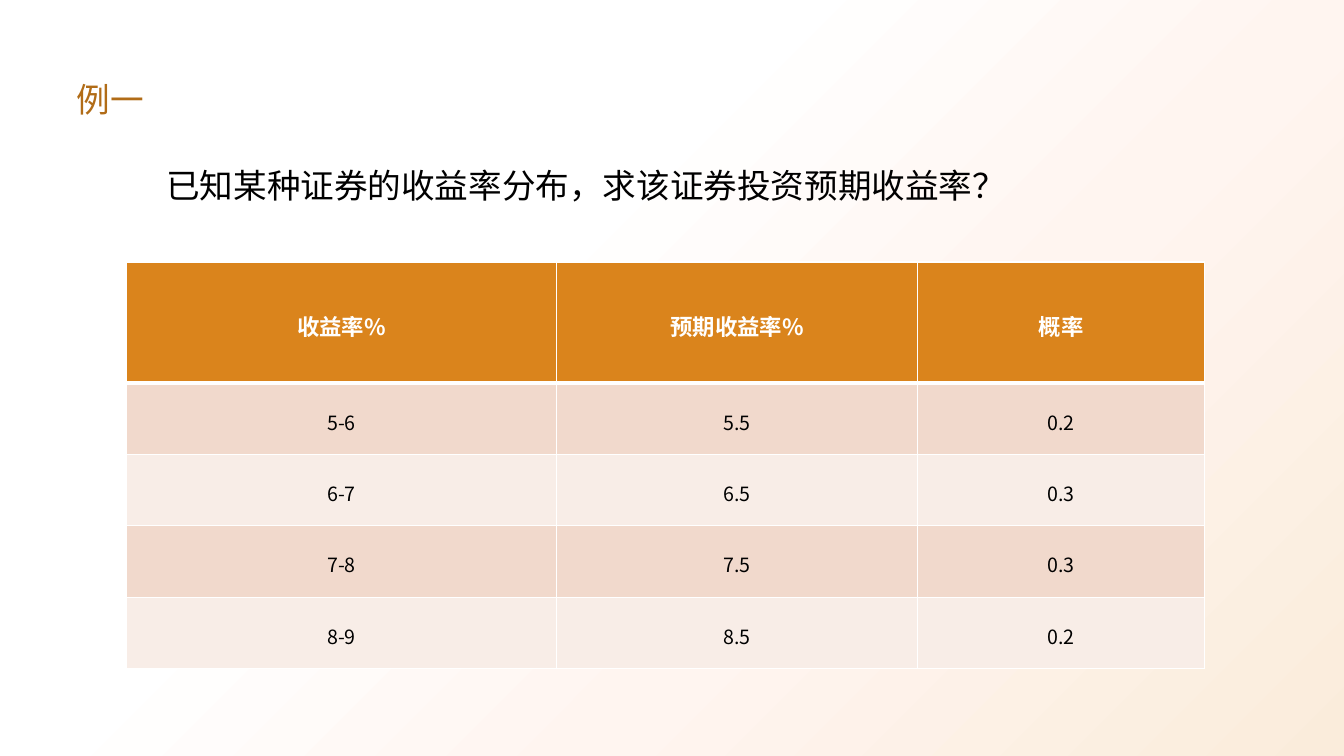
from copy import deepcopy

from lxml import etree
from pptx import Presentation, util as u
from pptx.dml.color import RGBColor
from pptx.enum import shapes, text
from pptx.oxml.ns import qn

FONT = "Noto Sans CJK SC"


def color(hex_code):
    return RGBColor.from_string(hex_code)


def write(frame, words, size=24, ink="000000", bold=False, align=text.PP_ALIGN.LEFT,
          anchor=text.MSO_ANCHOR.TOP, spacing=1.0, margins=(0, 0)):
    """Fill a text frame; margins are horizontal and vertical, in cm."""
    frame.word_wrap = True
    frame.vertical_anchor = anchor
    frame.margin_left = frame.margin_right = u.Cm(margins[0])
    frame.margin_top = frame.margin_bottom = u.Cm(margins[1])
    paragraph = frame.paragraphs[0]
    paragraph.alignment = align
    paragraph.line_spacing = spacing
    run = paragraph.add_run()
    run.text = words
    run.font.size = u.Pt(size)
    run.font.bold = bold
    run.font.color.rgb = color(ink)
    run.font.name = FONT
    etree.SubElement(run.font._element, qn("a:ea"), typeface=FONT)


deck = Presentation()
deck.slide_width, deck.slide_height = u.Cm(33.87), u.Cm(19.05)
slide = deck.slides.add_slide(deck.slide_layouts[6])

# Backdrop fading from white to cream
backdrop = slide.shapes.add_shape(shapes.MSO_SHAPE.RECTANGLE, 0, 0,
                                  deck.slide_width, deck.slide_height)
backdrop.shadow.inherit = False
backdrop.line.fill.background()
backdrop.fill.gradient()
backdrop.fill.gradient_angle = 315
first_stop = backdrop.fill._fill._gradFill.find(qn("a:gsLst"))[0]
first_stop.addnext(deepcopy(first_stop))
fade = [(0.37, "FFFFFF"), (0.64, "FFF5F0"), (1, "FAECDB")]
for stop, (position, shade) in zip(backdrop.fill.gradient_stops, fade):
    stop.position = position
    stop.color.rgb = color(shade)

# Question
question = slide.shapes.add_textbox(u.Cm(4.19), u.Cm(3.86), u.Cm(21.69), u.Cm(1.6))
write(question.text_frame, "已知某种证券的收益率分布，求该证券投资预期收益率？", spacing=1.3)

# Table of returns
returns = [
    ("收益率%", "预期收益率%", "概率"),
    ("5-6", "5.5", "0.2"),
    ("6-7", "6.5", "0.3"),
    ("7-8", "7.5", "0.3"),
    ("8-9", "8.5", "0.2"),
]
column_widths = [10.85, 9.09, 7.24]
row_heights = [3.05] + [1.8] * 4
table = slide.shapes.add_table(
    len(returns), len(column_widths), u.Cm(3.18), u.Cm(6.6),
    u.Cm(sum(column_widths)), u.Cm(sum(row_heights))).table
for column, width in zip(table.columns, column_widths):
    column.width = u.Cm(width)
for row, height in zip(table.rows, row_heights):
    row.height = u.Cm(height)

for r, values in enumerate(returns):
    header = r == 0
    band = "DA841C" if header else ("F8EDE7", "F1D9CC")[r % 2]
    borders = {"lnL": 1, "lnR": 1, "lnT": 3 if r == 1 else 1, "lnB": 3 if header else 1}
    for c, value in enumerate(values):
        cell = table.cell(r, c)
        write(cell.text_frame, value, size=16 if header else 14,
              ink="FFFFFF" if header else "000000", bold=header,
              align=text.PP_ALIGN.CENTER, spacing=1.2)
        cell.vertical_anchor = text.MSO_ANCHOR.MIDDLE
        cell.margin_left = cell.margin_right = u.Cm(0.48)
        cell.margin_top = cell.margin_bottom = u.Cm(0.3)
        properties = cell._tc.get_or_add_tcPr()
        for side, points in borders.items():
            border = etree.SubElement(properties, qn(f"a:{side}"), w=str(u.Pt(points)))
            border_fill = etree.SubElement(border, qn("a:solidFill"))
            etree.SubElement(border_fill, qn("a:srgbClr"), val="FFFFFF")
        cell.fill.solid()
        cell.fill.fore_color.rgb = color(band)

# Title
title = slide.shapes.add_textbox(u.Cm(1.93), u.Cm(0.99), u.Cm(30), u.Cm(2.01))
write(title.text_frame, "例一", ink="B16C17", anchor=text.MSO_ANCHOR.BOTTOM)

deck.save("out.pptx")
